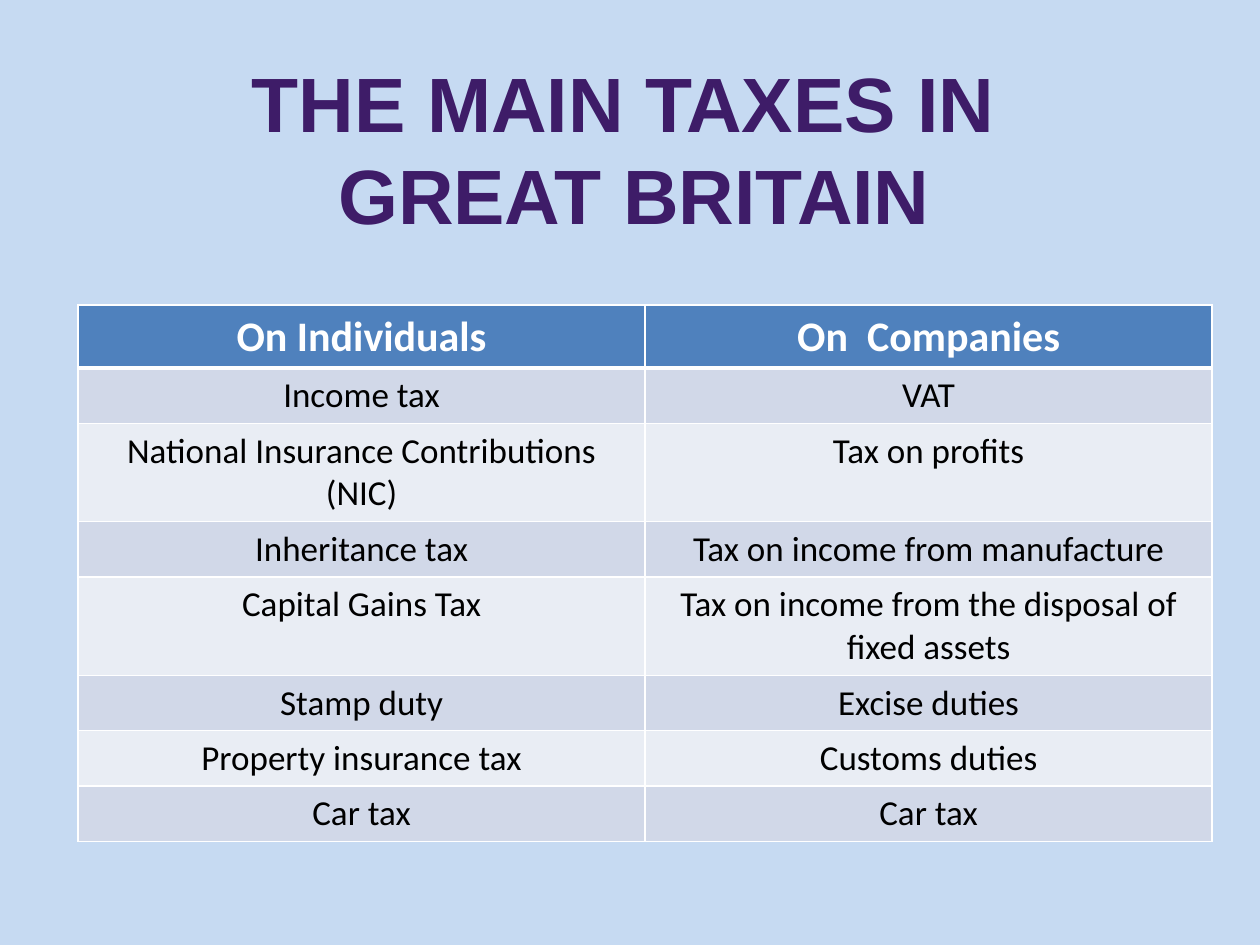
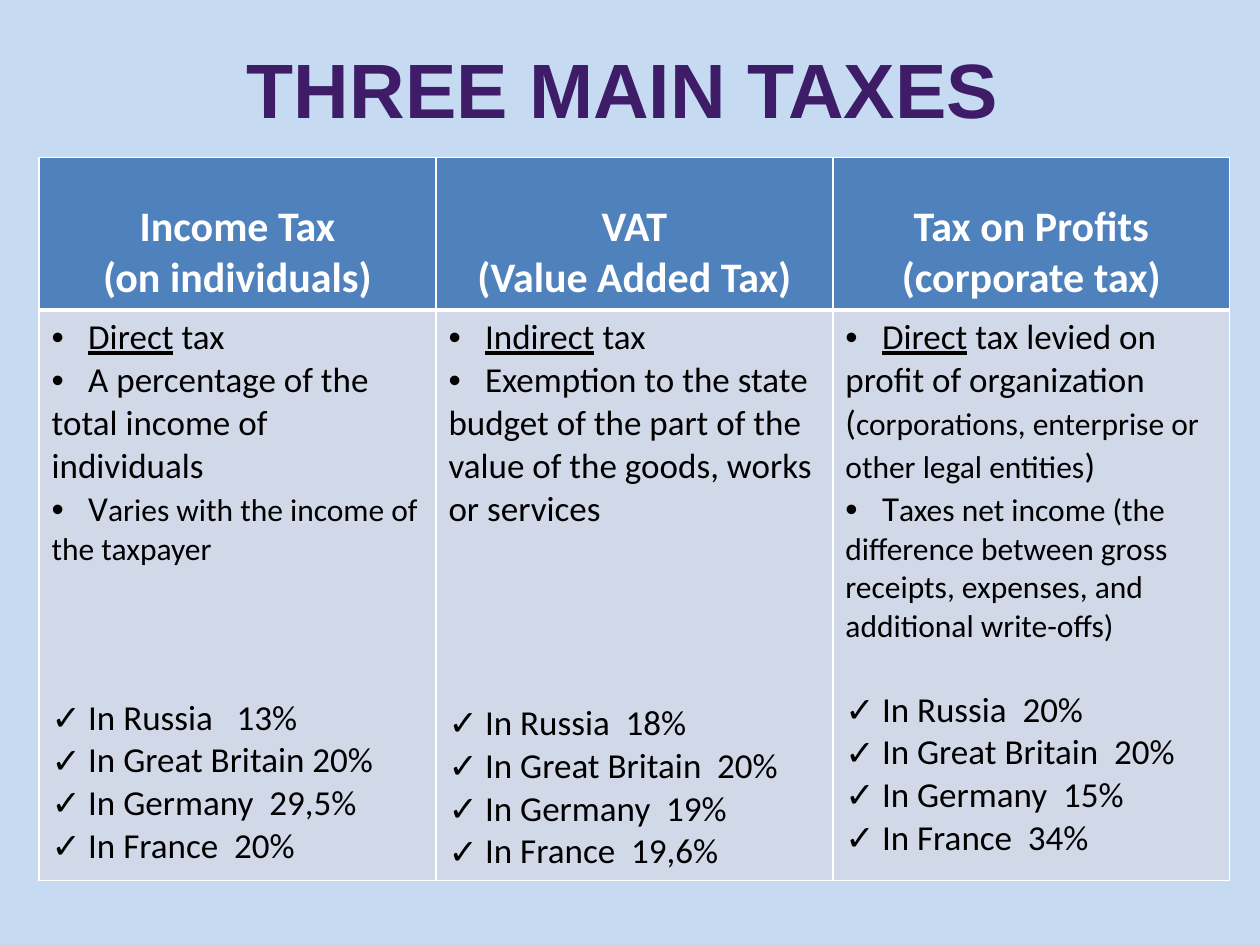
from lxml import etree
from pptx import Presentation
from pptx.dml.color import RGBColor
from pptx.enum.text import MSO_ANCHOR, PP_ALIGN
from pptx.oxml.ns import qn
from pptx.util import Inches, Pt

CENTER = PP_ALIGN.CENTER
LEFT = PP_ALIGN.LEFT
MIDDLE = MSO_ANCHOR.MIDDLE

SKY = RGBColor(0xC6, 0xDA, 0xF2)
PURPLE = RGBColor(0x3E, 0x1C, 0x68)
BLUE = RGBColor(0x4F, 0x81, 0xBD)
BAND_DARK = RGBColor(0xD1, 0xD8, 0xE8)
BAND_LIGHT = RGBColor(0xE9, 0xED, 0xF4)
WHITE = RGBColor(0xFF, 0xFF, 0xFF)
BLACK = RGBColor(0x00, 0x00, 0x00)

HEADER_SIZE, BODY_SIZE, SMALL_SIZE = 24, 20, 18
BULLET_GAP = Inches(0.29)

prs = Presentation()
prs.slide_width, prs.slide_height = Inches(10), Inches(7.5)


def start_slide(title, left, top, width, height):
    """Add a slide with the shared background and title style."""
    slide = prs.slides.add_slide(prs.slide_layouts[6])
    slide.background.fill.solid()
    slide.background.fill.fore_color.rgb = SKY
    box = slide.shapes.add_textbox(Inches(left), Inches(top), Inches(width), Inches(height))
    box.text_frame.word_wrap = True
    box.text_frame.vertical_anchor = MIDDLE
    heading = box.text_frame.paragraphs[0]
    heading.text = title
    heading.alignment = CENTER
    heading.font.name, heading.font.size, heading.font.bold = "Arial", Pt(44), True
    heading.font.color.rgb = PURPLE
    return slide


def style_cell(cell, fill, row, align):
    """Fill and border a cell; the line under the header row is thicker."""
    is_header = row == 0
    cell.fill.solid()
    cell.fill.fore_color.rgb = fill
    widths = {"lnL": 1, "lnR": 1, "lnT": 3 if row == 1 else 1, "lnB": 3 if is_header else 1}
    properties = cell._tc.get_or_add_tcPr()
    for position, (side, points) in enumerate(widths.items()):
        line = etree.Element(qn(f"a:{side}"), w=str(Pt(points)))
        color = etree.SubElement(etree.SubElement(line, qn("a:solidFill")), qn("a:srgbClr"))
        color.set("val", str(WHITE))
        properties.insert(position, line)
    for paragraph in cell.text_frame.paragraphs:
        paragraph.alignment = align
        paragraph.font.name = "Calibri"
        paragraph.font.size = Pt(HEADER_SIZE if is_header else BODY_SIZE)
        paragraph.font.bold = is_header
        paragraph.font.color.rgb = WHITE if is_header else BLACK


# Slide 1: taxes on individuals and companies
slide = start_slide("THE MAIN TAXES IN \vGREAT BRITAIN", 0.23, 0.31, 9.61, 1.72)

tax_rows = [
    ("On Individuals", "On  Companies", 0.5),
    ("Income tax", "VAT", 0.44),
    ("National Insurance Contributions (NIC)", "Tax on profits", 0.78),
    ("Inheritance tax", "Tax on income from manufacture", 0.44),
    ("Capital Gains Tax", "Tax on income from the disposal of fixed assets", 0.78),
    ("Stamp duty", "Excise duties", 0.44),
    ("Property insurance tax", "Customs duties", 0.44),
    ("Car tax", "Car tax", 0.44),
]
taxes = slide.shapes.add_table(
    len(tax_rows), 2, Inches(0.62), Inches(2.42), Inches(9), Inches(4.26)).table
for row, (*names, height) in enumerate(tax_rows):
    taxes.rows[row].height = Inches(height)
    fill = BLUE if row == 0 else BAND_DARK if row % 2 else BAND_LIGHT
    for column, name in enumerate(names):
        cell = taxes.cell(row, column)
        cell.text = name
        style_cell(cell, fill, row, CENTER)

# Slide 2: three taxes with their features and rates
slide = start_slide("THREE MAIN TAXES", 0.39, 0.23, 9.11, 0.94)

# Each tax: header, features as (text, size, underlined) runs, rates, blank height above rates
main_taxes = [
    ("Income Tax\n(on individuals)",
     [[("Direct", BODY_SIZE, True), (" tax", BODY_SIZE, False)],
      [("A percentage of the total income of individuals", BODY_SIZE, False)],
      [("V", BODY_SIZE, False),
       ("aries with the income of the taxpayer", SMALL_SIZE, False)]],
     ["In Russia   13%", "In Great Britain 20%", "In Germany  29,5%", "In France  20%"], 73),
    ("VAT\n(Value Added Tax)",
     [[("Indirect", BODY_SIZE, True), (" tax", BODY_SIZE, False)],
      [("Exemption to the state budget of the part of the value of the goods, "
        "works or services", BODY_SIZE, False)]],
     ["In Russia  18%", "In Great Britain  20%", "In Germany  19%", "In France  19,6%"], 98),
    ("Tax on Profits\n(corporate tax)",
     [[("Direct", BODY_SIZE, True),
       (" tax levied on profit of organization (", BODY_SIZE, False),
       ("corporations, enterprise or other legal entities", SMALL_SIZE, False),
       (")", BODY_SIZE, False)],
      [("T", BODY_SIZE, False),
       ("axes net income (the difference between gross receipts, expenses, and "
        "additional write-offs)", SMALL_SIZE, False)]],
     ["In Russia  20%", "In Great Britain  20%", "In Germany  15%", "In France  34%"], 24.5),
]
comparison = slide.shapes.add_table(
    2, len(main_taxes), Inches(0.31), Inches(1.25), Inches(9.45), Inches(5.74)).table
comparison.rows[0].height = Inches(1.21)
comparison.rows[1].height = Inches(4.53)

for column, (header, features, rates, gap) in enumerate(main_taxes):
    header_cell = comparison.cell(0, column)
    header_cell.text = header
    header_cell.margin_top = Inches(0.35)
    style_cell(header_cell, BLUE, 0, CENTER)

    body_cell = comparison.cell(1, column)
    items = [("•", runs) for runs in features]
    items += [("✓", [(rate, BODY_SIZE, False)]) for rate in rates]
    for _ in items[1:]:
        body_cell.text_frame.add_paragraph()
    style_cell(body_cell, BAND_DARK, 1, LEFT)

    for index, (mark, runs) in enumerate(items):
        paragraph = body_cell.text_frame.paragraphs[index]
        if index == len(features):
            paragraph.space_before = Pt(gap)
        is_feature = mark == "•"
        for position, (text, size, underlined) in enumerate(runs):
            run = paragraph.add_run()
            # Features wrap back to the cell edge, so a tab sets off their first line
            run.text = "\t" + text if is_feature and position == 0 and not underlined else text
            run.font.size = Pt(size)
            run.font.underline = underlined
        if is_feature and runs[0][2]:
            tab_run = paragraph.add_run()
            tab_run.text = "\t"
            tab_run.font.size = Pt(BODY_SIZE)
            paragraph.runs[0]._r.addprevious(tab_run._r)

        # Bullet mark, indent and tab stop
        properties = paragraph._p.get_or_add_pPr()
        properties.set("marL", str(0 if is_feature else BULLET_GAP))
        properties.set("indent", str(0 if is_feature else -BULLET_GAP))
        default_font = properties.find(qn("a:defRPr"))
        default_font.addprevious(etree.Element(qn("a:buFont"), typeface="Arial"))
        default_font.addprevious(etree.Element(qn("a:buChar"), char=mark))
        if is_feature:
            tabs = etree.Element(qn("a:tabLst"))
            etree.SubElement(tabs, qn("a:tab"), pos=str(BULLET_GAP), algn="l")
            default_font.addprevious(tabs)

prs.save("out.pptx")
